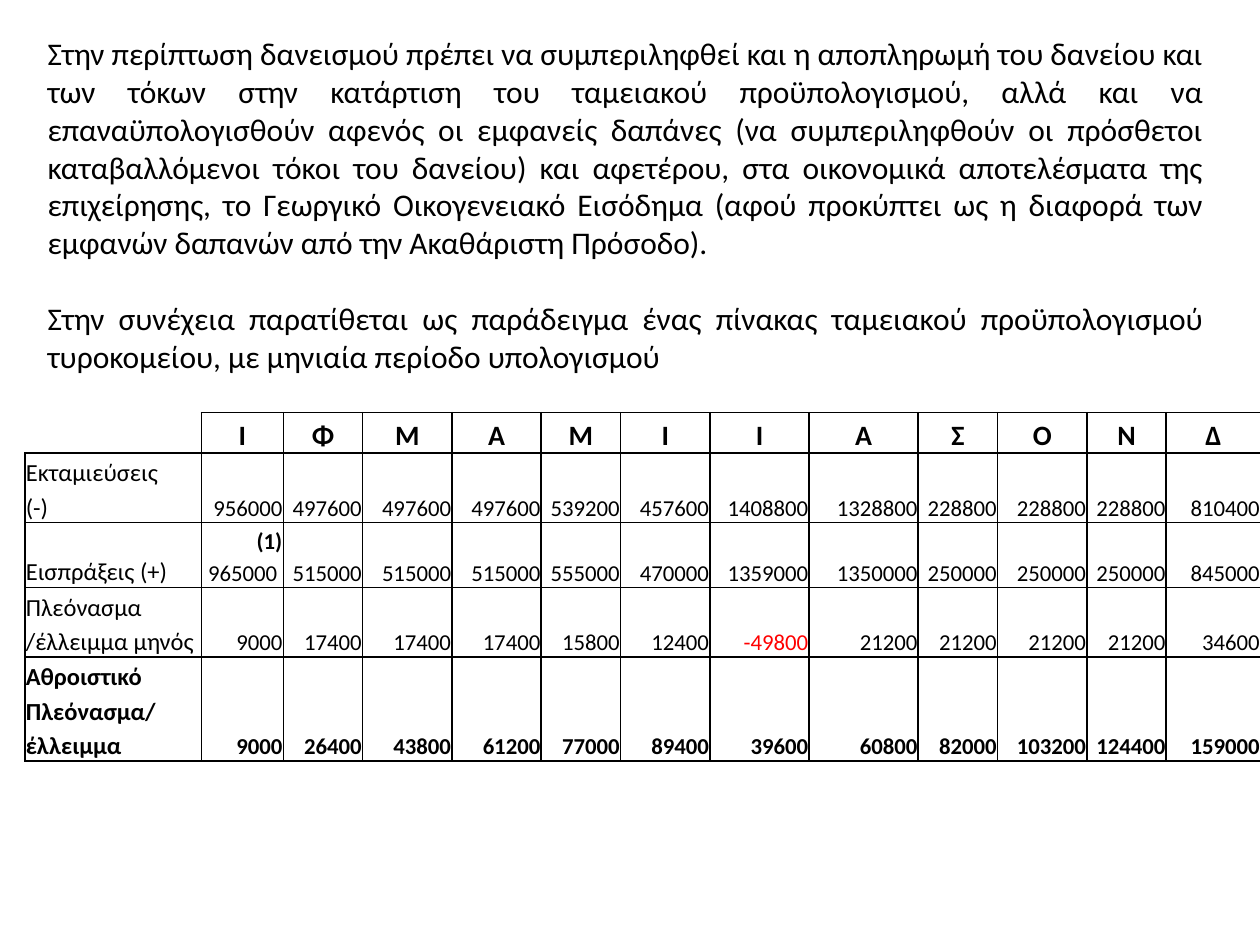
from dataclasses import dataclass

from lxml.etree import SubElement
from pptx import Presentation
from pptx.dml.color import RGBColor
from pptx.enum.text import MSO_ANCHOR, PP_ALIGN
from pptx.oxml.ns import qn
from pptx.util import Cm, Pt


@dataclass(frozen=True)
class Theme:
    """Colours, font and type sizes of the slide."""
    font: str = "Calibri"
    ink: str = "000000"
    negative: str = "FF0000"
    body: float = 18
    header: float = 16
    label: float = 14
    number: float = 13
    rule: float = 1


THEME = Theme()

PARAGRAPHS = [
    "Στην περίπτωση δανεισμού πρέπει να συμπεριληφθεί και η αποπληρωμή του δανείου "
    "και των τόκων στην κατάρτιση του ταμειακού προϋπολογισμού, αλλά και να "
    "επαναϋπολογισθούν αφενός οι εμφανείς δαπάνες (να συμπεριληφθούν οι πρόσθετοι "
    "καταβαλλόμενοι τόκοι του δανείου) και αφετέρου, στα οικονομικά αποτελέσματα της "
    "επιχείρησης, το Γεωργικό Οικογενειακό Εισόδημα (αφού προκύπτει ως η διαφορά των "
    "εμφανών δαπανών από την Ακαθάριστη Πρόσοδο).",
    "Στην συνέχεια παρατίθεται ως παράδειγμα ένας πίνακας ταμειακού προϋπολογισμού "
    "τυροκομείου, με μηνιαία περίοδο υπολογισμού",
]

MONTHS = "ΙΦΜΑΜΙΙΑΣΟΝΔ"
BUDGET = [
    ("Εκταμιεύσεις\n(-)", [956000, 497600, 497600, 497600, 539200, 457600,
                           1408800, 1328800, 228800, 228800, 228800, 810400]),
    ("Εισπράξεις (+)", [965000, 515000, 515000, 515000, 555000, 470000,
                        1359000, 1350000, 250000, 250000, 250000, 845000]),
    ("Πλεόνασμα /έλλειμμα μηνός", [9000, 17400, 17400, 17400, 15800, 12400,
                                   -49800, 21200, 21200, 21200, 21200, 34600]),
    ("Αθροιστικό Πλεόνασμα/ έλλειμμα", [9000, 26400, 43800, 61200, 77000, 89400,
                                        39600, 60800, 82000, 103200, 124400, 159000]),
]
COLUMN_WIDTHS = [3.56, 1.65, 1.6, 1.8, 1.8, 1.6, 1.8, 2, 2.2, 1.6, 1.8, 1.6, 1.9]
ROW_HEIGHTS = [0.8, 1.38, 1.29, 1.38, 2.05]


def style_paragraph(p, size, align, bold=False, color=THEME.ink):
    """Set the font and alignment of one paragraph."""
    p.alignment = align
    p.font.name = THEME.font
    p.font.size = Pt(size)
    p.font.bold = bold
    p.font.color.rgb = RGBColor.from_string(color)


def add_explanation(s, left, top, width, height):
    """Place the justified explanatory text in the given box."""
    sp = s.shapes.add_textbox(Cm(left), Cm(top), Cm(width), Cm(height))
    tf = sp.text_frame
    tf.word_wrap = True
    tf.vertical_anchor = MSO_ANCHOR.MIDDLE
    for i, text in enumerate(PARAGRAPHS):
        p = tf.add_paragraph() if i else tf.paragraphs[0]
        p.text = text
        style_paragraph(p, THEME.body, PP_ALIGN.JUSTIFY)
        p.space_before = Pt(22 if i else 0)


def set_borders(cell, sides):
    """Rule the named sides of a cell and clear the others."""
    tc_pr = cell._tc.get_or_add_tcPr()
    for side in "LRTB":
        ln = SubElement(tc_pr, qn(f"a:ln{side}"), w=str(Pt(THEME.rule)))
        if side in sides:
            fill = SubElement(ln, qn("a:solidFill"))
            SubElement(fill, qn("a:srgbClr"), val=THEME.ink)
        else:
            SubElement(ln, qn("a:noFill"))


def fill_cell(cell, text, size, align, **font):
    """Write one bottom-aligned table cell."""
    cell.text = text
    for p in cell.text_frame.paragraphs:
        style_paragraph(p, size, align, **font)
        p.line_spacing = 1.15


def add_budget_table(s, left, top):
    """Place the monthly cash budget with its corner at the given point."""
    frame = s.shapes.add_table(len(ROW_HEIGHTS), len(COLUMN_WIDTHS), Cm(left), Cm(top),
                               Cm(sum(COLUMN_WIDTHS)), Cm(sum(ROW_HEIGHTS)))
    table = frame.table
    table.first_row = table.horz_banding = False
    for column, width in zip(table.columns, COLUMN_WIDTHS):
        column.width = Cm(width)
    for row, height in zip(table.rows, ROW_HEIGHTS):
        row.height = Cm(height)
    for i, cell in enumerate(table.iter_cells()):
        set_borders(cell, "LRTB" if i else "RB")
        cell.fill.background()
        cell.vertical_anchor = MSO_ANCHOR.BOTTOM
        cell.margin_left = cell.margin_right = cell.margin_top = Cm(0.02)
        cell.margin_bottom = 0

    for c, month in enumerate(MONTHS, 1):
        fill_cell(table.cell(0, c), month, THEME.header, PP_ALIGN.CENTER, bold=True)
    for r, (label, values) in enumerate(BUDGET, 1):
        bold = r == len(BUDGET)
        fill_cell(table.cell(r, 0), label, THEME.label, PP_ALIGN.LEFT, bold=bold)
        for c, value in enumerate(values, 1):
            color = THEME.negative if value < 0 else THEME.ink
            fill_cell(table.cell(r, c), str(value), THEME.number, PP_ALIGN.RIGHT,
                      bold=bold, color=color)

    p = table.cell(2, 1).text_frame.paragraphs[0]
    first_receipt = p.runs[0].text
    p.runs[0].text = "(1)"
    p.runs[0].font.bold = True
    p.add_run().text = f" {first_receipt} "


def main():
    """Build and save the slide."""
    prs = Presentation()
    prs.slide_width, prs.slide_height = Cm(25.4), Cm(19.05)
    s = prs.slides.add_slide(prs.slide_layouts[6])
    add_budget_table(s, 0.5, 8.32)
    add_explanation(s, 0.71, 0.53, 23.8, 7.19)
    prs.save("out.pptx")


if __name__ == "__main__":
    main()
